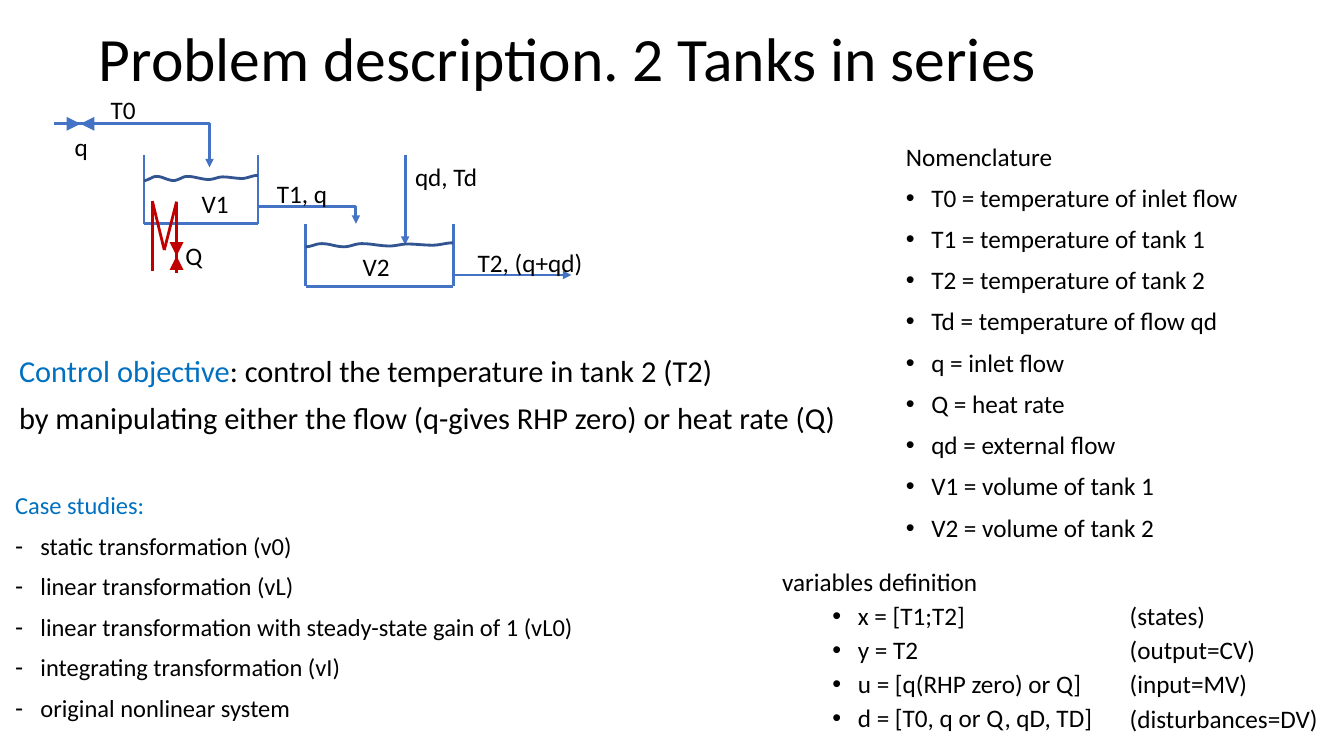
from dataclasses import dataclass
from itertools import pairwise
from math import cos, pi

from lxml.etree import SubElement
from pptx import Presentation
from pptx.dml.color import RGBColor
from pptx.enum.shapes import MSO_CONNECTOR
from pptx.enum.text import MSO_ANCHOR, MSO_AUTO_SIZE
from pptx.oxml.ns import qn
from pptx.slide import Slide
from pptx.util import Cm, Pt

Point = tuple[float, float]


@dataclass(frozen=True)
class Theme:
    font: str = "Calibri"
    bullet_font: str = "Arial"
    ink: RGBColor = RGBColor(0x00, 0x00, 0x00)
    accent: RGBColor = RGBColor(0x00, 0x70, 0xC0)
    pipe: RGBColor = RGBColor(0x44, 0x72, 0xC4)
    water: RGBColor = RGBColor(0x32, 0x54, 0x91)
    heat: RGBColor = RGBColor(0xC0, 0x00, 0x00)
    title_size: float = 44
    objective_size: float = 21.7
    body_size: float = 18
    case_size: float = 17.5
    pipe_width: float = 2
    valve_width: float = 0.5


THEME = Theme()


@dataclass(frozen=True)
class Box:
    left: float
    top: float
    width: float
    height: float = 1.02


@dataclass(frozen=True)
class Line:
    text: str
    lead: str = ""
    bullet: str = ""
    margin: float = 0.64


@dataclass(frozen=True)
class Pipe:
    start: Point
    end: Point
    bent: bool = False


@dataclass(frozen=True)
class Tank:
    left: float
    top: float
    right: float
    bottom: float
    surface: float
    ripple: float


@dataclass(frozen=True)
class Valve:
    center: Point
    reach: Point
    color: RGBColor


@dataclass(frozen=True)
class Label:
    text: str
    box: Box


CRESTS: list[Point] = [(0, 1), (0.11, 0.2), (0.26, 1), (0.38, 0.2),
                       (0.57, 0.8), (0.69, 0.3), (0.86, 0.6), (1, 0)]
CREST_STEPS = 8
HANGING = 0.64

TANKS = [
    Tank(3.63, 3.91, 6.5, 5.64, surface=4.42, ripple=0.13),
    Tank(7.7, 5.64, 11.42, 7.21, surface=6.12, ripple=0.1),
]
PIPES = [
    Pipe((1.37, 3.12), (5.28, 4.22), bent=True),
    Pipe((6.5, 5.21), (8.97, 5.64), bent=True),
    Pipe((11.4, 6.93), (14.4, 6.93)),
    Pipe((10.21, 3.91), (10.21, 6.17)),
]
HEATER: list[Point] = [(3.84, 6.83), (3.84, 5.07), (4.14, 6.3), (4.45, 5.08), (4.45, 6.88)]
VALVES = [
    Valve((2.03, 3.12), (0.2, 0), THEME.pipe),
    Valve((4.45, 6.45), (0, 0.2), THEME.heat),
]
LABELS = [
    Label("V2", Box(8.89, 6.2, 1.19)),
    Label("V1", Box(4.83, 4.62, 1.19)),
    Label("T2, (q+qd)", Box(11.79, 6.12, 3.18)),
    Label("T1, q", Box(6.73, 4.37, 1.8)),
    Label("qd, Td", Box(10.21, 3.94, 2.11)),
    Label("Q", Box(4.42, 5.94, 0.94)),
    Label("T0", Box(2.54, 2.26, 1.14)),
    Label("q", Box(1.63, 3.18, 0.86)),
]
NOMENCLATURE = [
    "T0 = temperature of inlet flow", "T1 = temperature of tank 1",
    "T2 = temperature of tank 2", "Td = temperature of flow qd",
    "q = inlet flow", "Q = heat rate", "qd = external flow",
    "V1 = volume of tank 1", "V2 = volume of tank 2",
]
VARIABLES = ["x = [T1;T2]", "y = T2", "u = [q(RHP zero) or Q]", "d = [T0, q or Q, qD, TD]"]
ROLES = ["(states)", "(output=CV)", "(input=MV)", "(disturbances=DV)"]
CASES = [
    "static transformation (v0)", "linear transformation (vL)",
    "linear transformation with steady-state gain of 1 (vL0)",
    "integrating transformation (vI)", "original nonlinear system",
]


def write(slide: Slide, box: Box, lines: list[Line], *, size: float = THEME.body_size,
          before: float = 10, spacing: float = 0.9, wrap: bool = True,
          anchor: MSO_ANCHOR = MSO_ANCHOR.TOP) -> None:
    frame = slide.shapes.add_textbox(
        Cm(box.left), Cm(box.top), Cm(box.width), Cm(box.height)).text_frame
    frame.word_wrap = wrap
    frame.auto_size = MSO_AUTO_SIZE.NONE if wrap else MSO_AUTO_SIZE.SHAPE_TO_FIT_TEXT
    frame.vertical_anchor = anchor
    for index, line in enumerate(lines):
        paragraph = frame.add_paragraph() if index else frame.paragraphs[0]
        paragraph.line_spacing = spacing
        paragraph.space_before = Pt(before)
        for text, color in ((line.lead, THEME.accent), (line.text, THEME.ink)):
            if text:
                run = paragraph.add_run()
                run.text = text
                run.font.name = THEME.font
                run.font.size = Pt(size)
                run.font.color.rgb = color
        if line.bullet:
            properties = paragraph._p.get_or_add_pPr()
            properties.set("marL", str(Cm(line.margin)))
            properties.set("indent", str(-Cm(HANGING)))
            SubElement(properties, qn("a:buFont"), typeface=THEME.bullet_font)
            SubElement(properties, qn("a:buChar"), char=line.bullet)


def draw_line(slide: Slide, start: Point, end: Point, color: RGBColor = THEME.pipe, *,
              width: float = THEME.pipe_width, arrow: str = "", bent: bool = False) -> None:
    kind = MSO_CONNECTOR.ELBOW if bent else MSO_CONNECTOR.STRAIGHT
    connector = slide.shapes.add_connector(kind, *(Cm(value) for value in (*start, *end)))
    connector.line.color.rgb = color
    connector.line.width = Pt(width)
    properties = connector._element.spPr
    if bent:
        properties.find(qn("a:prstGeom")).set("prst", "bentConnector2")
    if arrow:
        SubElement(properties.find(qn("a:ln")), qn("a:tailEnd"),
                   type="triangle", w=arrow, len=arrow)
    SubElement(properties, qn("a:effectLst"))


def draw_tank(slide: Slide, tank: Tank) -> None:
    for side in (tank.left, tank.right):
        draw_line(slide, (side, tank.top), (side, tank.bottom))
    draw_line(slide, (tank.right, tank.bottom), (tank.left, tank.bottom))

    def on_surface(across: float, depth: float) -> tuple[int, int]:
        return (Cm(tank.left + across * (tank.right - tank.left)),
                Cm(tank.surface + depth * tank.ripple))

    ripples = []
    for (x1, y1), (x2, y2) in pairwise(CRESTS):
        for step in range(1, CREST_STEPS + 1):
            share = step / CREST_STEPS
            ease = (1 - cos(pi * share)) / 2
            ripples.append(on_surface(x1 + (x2 - x1) * share, y1 + (y2 - y1) * ease))
    builder = slide.shapes.build_freeform(*on_surface(*CRESTS[0]))
    builder.add_line_segments(ripples, close=False)
    water = builder.convert_to_shape()
    water.shadow.inherit = False
    water.fill.background()
    water.line.color.rgb = THEME.water
    water.line.width = Pt(THEME.pipe_width)


def draw_valve(slide: Slide, valve: Valve) -> None:
    (x, y), (dx, dy) = valve.center, valve.reach
    for sign in (-1, 1):
        draw_line(slide, (x + sign * dx, y + sign * dy), valve.center, valve.color,
                  width=THEME.valve_width, arrow="lg")


def main() -> None:
    presentation = Presentation()
    presentation.slide_width, presentation.slide_height = Cm(33.87), Cm(19.05)
    slide = presentation.slides.add_slide(presentation.slide_layouts[6])

    write(slide, Box(2.24, -0.3, 29.21, 3.68), [Line("Problem description. 2 Tanks in series")],
          size=THEME.title_size, before=0, anchor=MSO_ANCHOR.MIDDLE)
    write(slide, Box(19.46, 14.22, 8.76, 4.83),
          [Line("variables definition")] + [Line(text, bullet="•", margin=1.91) for text in VARIABLES],
          before=5)
    write(slide, Box(28.22, 15.09, 5.6, 3.96), [Line(text) for text in ROLES], before=5)

    for pipe in PIPES:
        draw_line(slide, pipe.start, pipe.end, arrow="med", bent=pipe.bent)
    for tank in TANKS:
        draw_tank(slide, tank)
    for start, end in pairwise(HEATER):
        draw_line(slide, start, end, THEME.heat)
    for valve in VALVES:
        draw_valve(slide, valve)
    for label in LABELS:
        write(slide, label.box, [Line(label.text)], before=0, spacing=1, wrap=False)

    write(slide, Box(22.58, 3.51, 10.69, 14.53),
          [Line("Nomenclature")] + [Line(text, bullet="•") for text in NOMENCLATURE])
    write(slide, Box(0.23, 8.86, 21.89, 2.36),
          [Line(": control the temperature in tank 2 (T2)", lead="Control objective"),
           Line("by manipulating either the flow (q-gives RHP zero) or heat rate (Q)")],
          size=THEME.objective_size)
    write(slide, Box(0.13, 12.32, 21.89, 6.27),
          [Line("", lead="Case studies:")] + [Line(text, bullet="-") for text in CASES],
          size=THEME.case_size)
    presentation.save("out.pptx")


if __name__ == "__main__":
    main()
